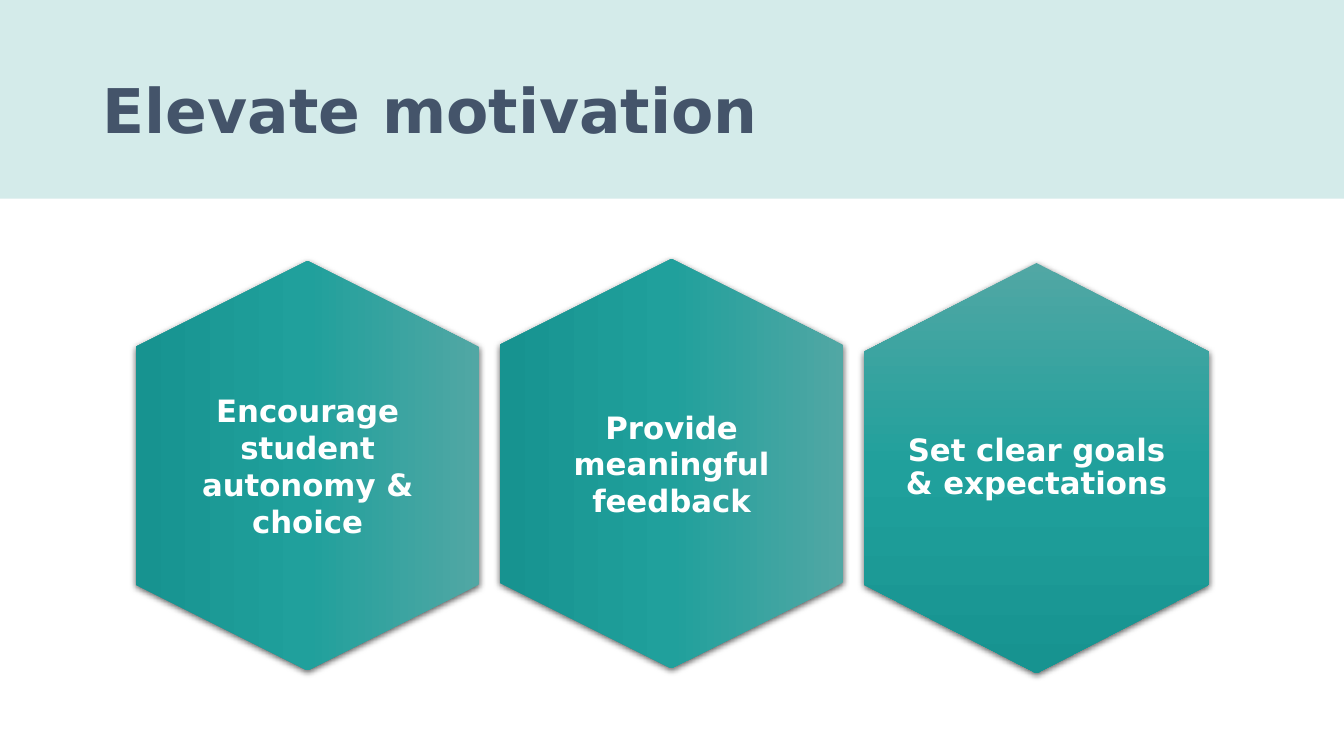
from pptx import Presentation
from pptx import util as u
from pptx.dml import color
from pptx.enum import shapes, text
from pptx.oxml import parse_xml
from pptx.oxml import ns

WIDTH, HEIGHT = 13.33, 7.5
MINT = color.RGBColor(0xD4, 0xEB, 0xEA)
SLATE = color.RGBColor(0x44, 0x54, 0x6A)
WHITE = color.RGBColor(0xFF, 0xFF, 0xFF)
TEAL_STOPS = {
    0: color.RGBColor(0x51, 0xA7, 0xA4),
    50: color.RGBColor(0x20, 0xA0, 0x9C),
    100: color.RGBColor(0x17, 0x93, 0x90),
}
FIRST_LEFT, COLUMN_STEP = 1.02, 3.61
HEX_LENGTH, HEX_BREADTH = 4.06, 3.4
TITLE_FONT = {"name": "DejaVu Sans", "size": u.Pt(44), "bold": True}
LABEL_FONT = {"name": "DejaVu Sans", "size": u.Pt(22), "bold": True}


def apply(target, values):
    for name, value in values.items():
        setattr(target, name, value)


def write(shape, words, font, ink, paragraph_format, margins=None):
    frame = shape.text_frame
    apply(frame, {"word_wrap": True, "vertical_anchor": text.MSO_ANCHOR.MIDDLE})
    apply(frame, margins or {})
    para = frame.paragraphs[0]
    apply(para, paragraph_format)
    span = para.add_run()
    span.text = words
    apply(span.font, font)
    span.font.color.rgb = ink


def add_band(page):
    band = page.shapes.add_shape(
        shapes.MSO_SHAPE.RECTANGLE, 0, 0, u.Inches(WIDTH), u.Inches(1.97))
    band.shadow.inherit = False
    band.fill.solid()
    band.fill.fore_color.rgb = MINT
    band.line.fill.background()
    page.shapes.element.insert(2, band.element)


def set_title(page, words):
    title = page.shapes.title
    apply(title, {"left": u.Inches(0.92), "top": u.Inches(0.4),
                  "width": u.Inches(11.5), "height": u.Inches(1.45)})
    write(title, words, TITLE_FONT, SLATE,
          {"alignment": text.PP_ALIGN.LEFT, "line_spacing": 0.9})


def shade(shape):
    shape.line.fill.background()
    shape.fill.solid()
    properties = shape.element.spPr
    stops = "".join(
        f'<a:gs pos="{share * 1000}"><a:srgbClr val="{tint}"/></a:gs>'
        for share, tint in TEAL_STOPS.items())
    gradient = parse_xml(
        f'<a:gradFill {ns.nsdecls("a")} rotWithShape="1"><a:gsLst>{stops}</a:gsLst>'
        '<a:lin ang="5400000" scaled="0"/></a:gradFill>')
    properties.replace(properties.find(ns.qn("a:solidFill")), gradient)
    shape.shadow.inherit = False
    properties.find(ns.qn("a:effectLst")).append(parse_xml(
        f'<a:outerShdw {ns.nsdecls("a")} blurRad="57150" dist="19050" dir="5400000" '
        'algn="ctr" rotWithShape="0"><a:srgbClr val="000000">'
        '<a:alpha val="63000"/></a:srgbClr></a:outerShdw>'))


def add_turned_hexagon(page, column, top, words):
    hexagon = page.shapes.add_shape(
        shapes.MSO_SHAPE.HEXAGON, u.Inches(FIRST_LEFT + column * COLUMN_STEP),
        u.Inches(top), u.Inches(HEX_LENGTH), u.Inches(HEX_BREADTH))
    hexagon.rotation = 90
    shade(hexagon)
    write(hexagon, words, LABEL_FONT, WHITE, {"alignment": text.PP_ALIGN.CENTER})
    hexagon.element.txBody.bodyPr.set("vert", "vert270")


def add_upright_hexagon(page, left, top, width, height, words):
    shoulder = 0.88
    middle, right, bottom = left + width / 2, left + width, top + height
    corners = [(right, top + shoulder), (right, bottom - shoulder), (middle, bottom),
               (left, bottom - shoulder), (left, top + shoulder)]
    builder = page.shapes.build_freeform(
        u.Inches(middle), u.Inches(top))
    builder.add_line_segments(
        [(u.Inches(x), u.Inches(y)) for x, y in corners], close=True)
    hexagon = builder.convert_to_shape()
    shade(hexagon)
    margins = {"margin_left": u.Inches(0.3), "margin_right": u.Inches(0.3),
               "margin_top": u.Inches(0.34), "margin_bottom": u.Inches(0.34)}
    write(hexagon, words, LABEL_FONT, WHITE,
          {"alignment": text.PP_ALIGN.CENTER, "line_spacing": 0.9}, margins)


def main():
    deck = Presentation()
    apply(deck, {"slide_width": u.Inches(WIDTH), "slide_height": u.Inches(HEIGHT)})
    page = deck.slides.add_slide(deck.slide_layouts[5])
    add_band(page)
    set_title(page, "Elevate motivation")
    add_turned_hexagon(page, 0, 2.92, "Encourage student autonomy & choice")
    add_turned_hexagon(page, 1, 2.9, "Provide meaningful feedback")
    add_upright_hexagon(page, 8.57, 2.61, 3.42, 4.07, "Set clear goals & expectations")
    deck.save("out.pptx")


if __name__ == "__main__":
    main()
